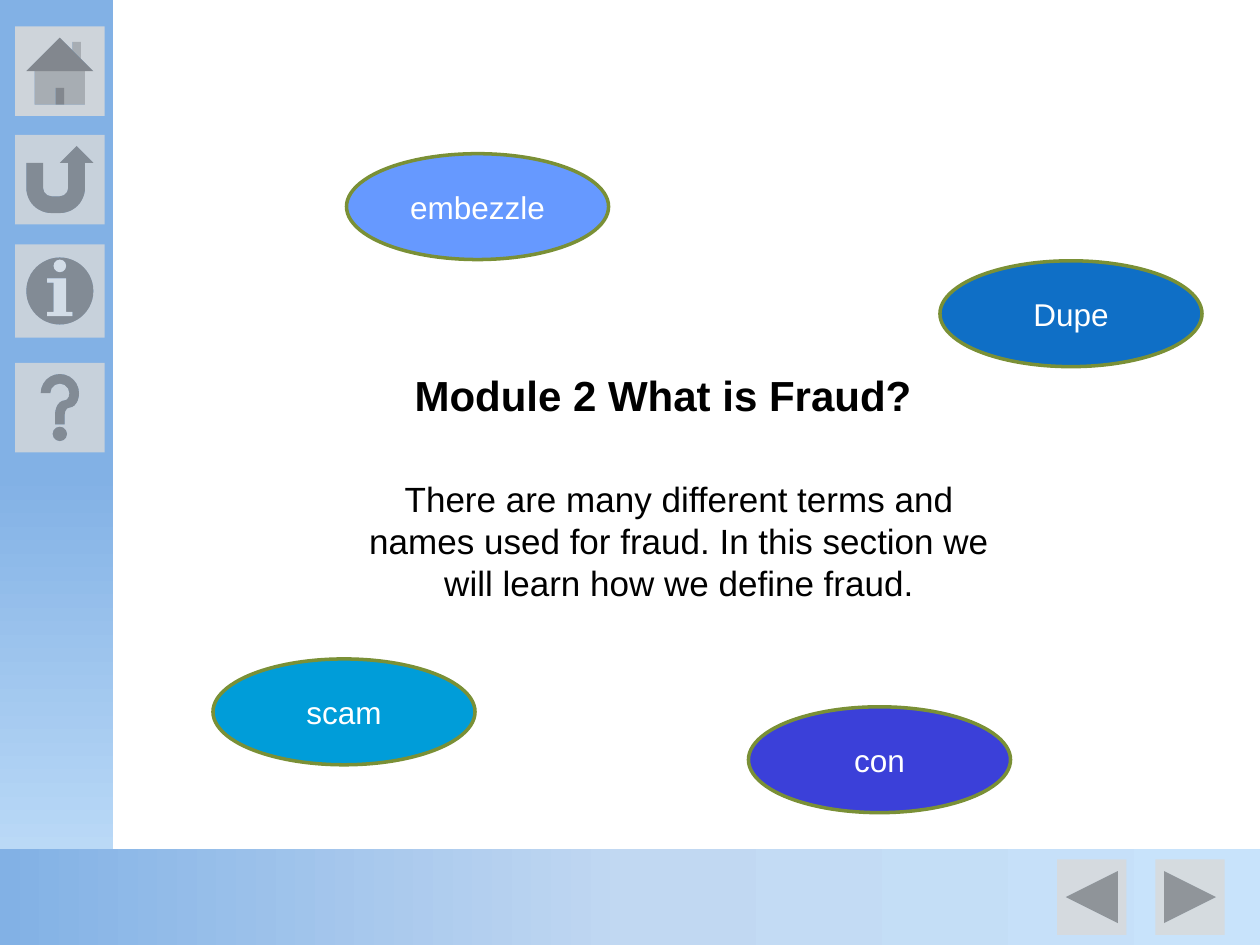
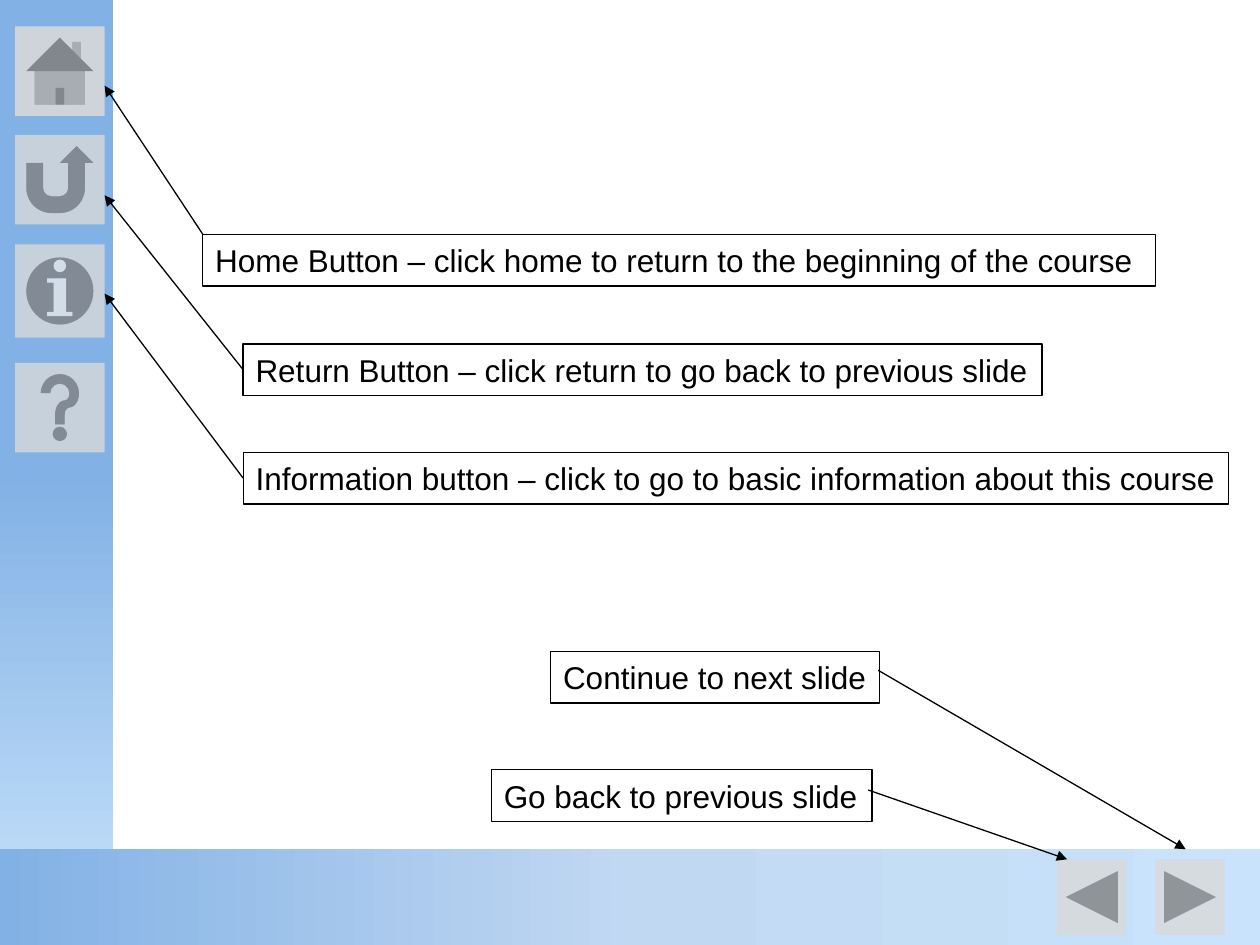
"""Build two course slides with a shared button frame."""
import copy
from dataclasses import dataclass

import lxml.etree
import pptx
import pptx.dml.color
import pptx.enum.shapes
import pptx.enum.text
import pptx.oxml.ns
import pptx.util

Inches = pptx.util.Inches
Pt = pptx.util.Pt
qn = pptx.oxml.ns.qn
SHAPE = pptx.enum.shapes.MSO_SHAPE
ALIGN = pptx.enum.text.PP_ALIGN
ANCHOR = pptx.enum.text.MSO_ANCHOR


@dataclass(frozen=True)
class Theme:
    font: str = "Arial"
    ink: str = "000000"
    white: str = "FFFFFF"
    rim: str = "7A9036"
    button: str = "D9D9D9"
    deep: str = "82B1E5"
    mist: str = "C1D8F2"
    pale: str = "C8E3FB"
    title: int = 24
    body: int = 20
    label: int = 18
    hair: float = 0.75
    edge: float = 2


THEME = Theme()
TERM = (2.08, 0.84)
SIDE = 0.12
SQUARE = 0.71
ARROW = (0.55, 0.6)
ROW = 0.41


def color(code):
    """Turn a hex code into a colour."""
    return pptx.dml.color.RGBColor.from_string(code)


def place(slide, kind, box, fill=None, line=None, width=THEME.hair):
    """Add a preset shape without shadow."""
    shape = slide.shapes.add_shape(kind, *map(Inches, box))
    shape.shadow.inherit = False
    if fill:
        shape.fill.solid()
        shape.fill.fore_color.rgb = color(fill)
    else:
        shape.fill.background()
    if line:
        shape.line.color.rgb = color(line)
        shape.line.width = Pt(width)
    else:
        shape.line.fill.background()
    return shape


def write(shape, text, size, ink=THEME.ink, align=ALIGN.LEFT, bold=False, wrap=True):
    """Set the text of a shape and its style."""
    frame = shape.text_frame
    frame.word_wrap = wrap
    frame.text = text
    para = frame.paragraphs[0]
    para.alignment = align
    font = para.font
    font.name, font.size, font.bold = THEME.font, Pt(size), bold
    font.color.rgb = color(ink)


def band(slide, box, codes, turn=0):
    """Add a band with an even three-stop gradient."""
    shape = place(slide, SHAPE.RECTANGLE, box)
    shape.rotation = turn
    shape.fill.gradient()
    shape.fill.gradient_angle = 180
    stops = shape.element.spPr.find(qn("a:gradFill")).find(qn("a:gsLst"))
    stops.insert(1, copy.deepcopy(stops[0]))
    for i, (stop, code) in enumerate(zip(shape.fill.gradient_stops, codes)):
        stop.position = i / 2
        stop.color.rgb = color(code)
    return shape


def button(slide, kind, box, alpha=80):
    """Add a see-through action button."""
    shape = place(slide, kind, box, THEME.button)
    tint = shape.element.spPr.find(qn("a:solidFill"))[0]
    lxml.etree.SubElement(tint, qn("a:alpha"), val=str(alpha * 1000))
    return shape


def frame(deck, slide):
    """Draw the bands and buttons, then move them to the master."""
    parts = [
        band(slide, (-3.3, 3.3, 7.5, 0.9), (THEME.deep, THEME.deep, THEME.pale), 270),
        band(slide, (0, 6.74, 10, 0.79), (THEME.pale, THEME.mist, THEME.deep)),
    ]
    for kind, top, high, alpha in (
        (SHAPE.ACTION_BUTTON_HOME, 0.21, SQUARE, 88),
        (SHAPE.ACTION_BUTTON_RETURN, 1.07, SQUARE, 80),
        (SHAPE.ACTION_BUTTON_INFORMATION, 1.94, 0.74, 80),
        (SHAPE.ACTION_BUTTON_HELP, 2.88, SQUARE, 80),
    ):
        parts.append(button(slide, kind, (SIDE, top, SQUARE, high), alpha))
    for kind, left in (
        (SHAPE.ACTION_BUTTON_BACK_OR_PREVIOUS, 8.39),
        (SHAPE.ACTION_BUTTON_FORWARD_OR_NEXT, 9.17),
    ):
        parts.append(button(slide, kind, (left, 6.82, *ARROW)))
    tree = deck.slide_master.shapes.element
    for number, part in enumerate(parts, 100):
        part.element.nvSpPr.cNvPr.set("id", str(number))
        tree.append(part.element)


def heading(slide, text, box):
    """Move and format the title placeholder."""
    title = slide.shapes.title
    title.left, title.top, title.width, title.height = map(Inches, box)
    write(title, text, THEME.title, bold=True, wrap=False)
    title.text_frame.auto_size = pptx.enum.text.MSO_AUTO_SIZE.NONE
    title.text_frame.vertical_anchor = ANCHOR.TOP


def term(slide, text, left, top, fill):
    """Add an oval that names one term for fraud."""
    oval = place(slide, SHAPE.OVAL, (left, top, *TERM), fill, THEME.rim, THEME.edge)
    write(oval, text, THEME.label, THEME.white, ALIGN.CENTER)


def note(slide, text, left, top, width, wrap=False):
    """Add an outlined label."""
    box = place(slide, SHAPE.RECTANGLE, (left, top, width, ROW), line=THEME.ink)
    write(box, text, THEME.label, wrap=wrap)
    return box


def arrow(slide, start, end, box=None):
    """Add an arrow, joined to the left side of a box if one is given."""
    kind = pptx.enum.shapes.MSO_CONNECTOR.STRAIGHT
    line = slide.shapes.add_connector(kind, *map(Inches, (*start, *end)))
    if box is not None:
        line.begin_connect(box, 1)
    line.line.color.rgb = color(THEME.ink)
    line.line.width = Pt(THEME.hair)
    props = line.element.spPr
    lxml.etree.SubElement(props.find(qn("a:ln")), qn("a:tailEnd"), type="triangle")
    lxml.etree.SubElement(props, qn("a:effectLst"))


def intro(slide):
    """Fill the opening slide of the module."""
    heading(slide, "Module 2 What is Fraud?", (3.19, 2.88, 4.18, 0.51))
    for text, left, top, fill in (
        ("embezzle", 2.75, 1.22, "6699FF"),
        ("scam", 1.69, 5.23, "009DD9"),
        ("con", 5.94, 5.61, "3B40D9"),
        ("Dupe", 7.46, 2.07, "0F6FC6"),
    ):
        term(slide, text, left, top, fill)
    body = slide.shapes.add_textbox(*map(Inches, (2.75, 3.74, 5.28, 1.11)))
    write(
        body,
        "There are many different terms and names used for fraud. "
        "In this section we will learn how we define fraud.",
        THEME.body,
        align=ALIGN.CENTER,
    )


def guide(slide):
    """Fill the slide that explains the buttons."""
    for text, left, top, width, start, end, join in (
        ("Home Button – click home to return to the beginning of the course",
         1.61, 1.86, 7.56, (1.61, 1.86), (0.83, 0.68), False),
        ("Return Button – click return to go back to previous slide",
         1.93, 2.73, 6.34, (1.93, 2.94), (0.83, 1.55), True),
        ("Information button – click to go to basic information about this course",
         1.93, 3.59, 7.82, (1.93, 3.8), (0.83, 2.33), True),
        ("Go back to previous slide",
         3.9, 6.11, 3.02, (6.89, 6.27), (8.47, 6.82), False),
        ("Continue to next slide",
         4.37, 5.17, 2.61, (6.97, 5.32), (9.41, 6.74), False),
    ):
        box = note(slide, text, left, top, width, wrap=text.startswith("Home"))
        arrow(slide, start, end, box if join else None)


def main():
    """Build and save the deck."""
    deck = pptx.Presentation()
    deck.slide_width, deck.slide_height = Inches(10), Inches(7.5)
    first = deck.slides.add_slide(deck.slide_layouts[5])
    frame(deck, first)
    intro(first)
    guide(deck.slides.add_slide(deck.slide_layouts[6]))
    deck.save("out.pptx")


if __name__ == "__main__":
    main()
